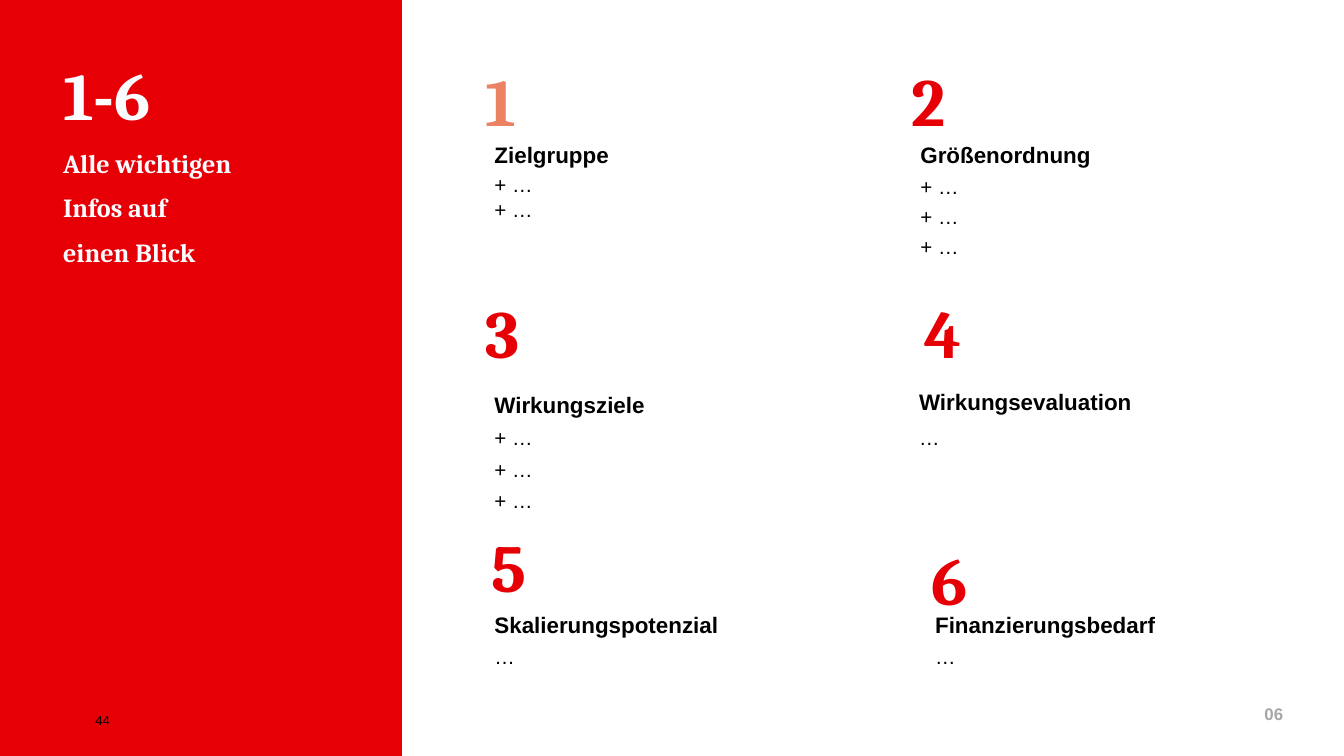
from pptx import Presentation
from pptx.dml.color import RGBColor
from pptx.enum.shapes import MSO_SHAPE
from pptx.enum.text import MSO_ANCHOR, PP_ALIGN
from pptx.util import Pt

RECT = MSO_SHAPE.RECTANGLE
TOP, BOTTOM = MSO_ANCHOR.TOP, MSO_ANCHOR.BOTTOM
LEFT = PP_ALIGN.LEFT
RED, SALMON, WHITE, BLACK = "E60005", "EB8264", "FFFFFF", "000000"
SERIF, SANS = "Cambria", "Arial"

TITLE = ["1-6", "Alle wichtigen", "Infos auf", "einen Blick"]

# heading, points, number left/top, box left/top/width/height, space above points (first, rest)
TOPICS = [
    ("Zielgruppe", ["+ …"] * 2, (254.9, 28.8), (257.8, 72, 179.3, 79.9), (2.2, 0)),
    ("Größenordnung", ["+ …"] * 3, (483.1, 28.8), (486, 72, 213.1, 90), (3, 3)),
    ("Wirkungsziele", ["+ …"] * 3, (254.9, 153.4), (257.8, 206, 220.3, 66.2), (3.7, 3.7)),
    ("Wirkungsevaluation", ["…"], (490.3, 153.4), (485.3, 204.5, 200.9, 59.8), (5.2, 0)),
    ("Skalierungspotenzial", ["…"], (258.5, 278.6), (257.8, 324, 184.3, 63.4), (3, 0)),
    ("Finanzierungsbedarf", ["…"], (493.9, 285.8), (493.9, 324, 184.3, 54), (3, 0)),
]


def color(code):
    return RGBColor.from_string(code)


def style(para, size, face, code, bold=False):
    para.alignment = LEFT
    for run in para.runs:
        font = run.font
        font.size, font.name, font.bold = Pt(size), face, bold
        font.color.rgb = color(code)


def add_rect(slide, place, fill):
    shape = slide.shapes.add_shape(RECT, *map(Pt, place))
    shape.shadow.inherit = False
    shape.fill.solid()
    shape.fill.fore_color.rgb = color(fill)
    shape.line.color.rgb = color(fill)
    shape.line.width = Pt(1.5)
    return shape


def add_text(slide, place, lines, inset=(0, 0), anchor=TOP):
    frame = slide.shapes.add_textbox(*map(Pt, place)).text_frame
    frame.word_wrap = True
    frame.vertical_anchor = anchor
    frame.margin_left = frame.margin_right = Pt(inset[0])
    frame.margin_top = frame.margin_bottom = Pt(inset[1])
    frame.text = "\n".join(lines)
    return frame.paragraphs


def add_topic(slide, head, points, place, gaps):
    frame = add_rect(slide, place, WHITE).text_frame
    frame.word_wrap = True
    frame.vertical_anchor = TOP
    frame.text = "\n".join([head] + points)
    for i, para in enumerate(frame.paragraphs):
        style(para, 11 if i else 12, SANS, BLACK, bold=not i)
        if i:
            para.space_before = Pt(gaps[min(i - 1, 1)])


def main():
    deck = Presentation()
    deck.slide_width, deck.slide_height = Pt(720), Pt(405)
    slide = deck.slides.add_slide(deck.slide_layouts[6])

    panel = add_rect(slide, (-0.7, 0, 216, 406), RED)
    panel.line.fill.background()

    for i, para in enumerate(add_text(slide, (33.8, 47.5, 162, 131.8), TITLE)):
        style(para, 14 if i else 36, SERIF, "FBFCFF", True)
        para.line_spacing = Pt(24)

    for head, points, _, place, gaps in TOPICS:
        add_topic(slide, head, points, place, gaps)
    for i, topic in enumerate(TOPICS):
        spot = (*topic[2], 33.8, 49)
        para = add_text(slide, spot, [str(i + 1)], (5, 2.9))[0]
        style(para, 36, SERIF, RED if i else SALMON, True)

    para = add_text(slide, (670.3, 373.7, 25.2, 18), ["06"], (7.2, 3.6))[0]
    para.runs[0].text = "06"
    style(para, 9, SANS, "A6A6A6", True)
    para.line_spacing = 1.0

    para = add_text(slide, (51.1, 381.6, 162, 8.6), ["44"], anchor=BOTTOM)[0]
    style(para, 7, SANS, BLACK)
    para.line_spacing = Pt(9)

    deck.save("out.pptx")


if __name__ == "__main__":
    main()
